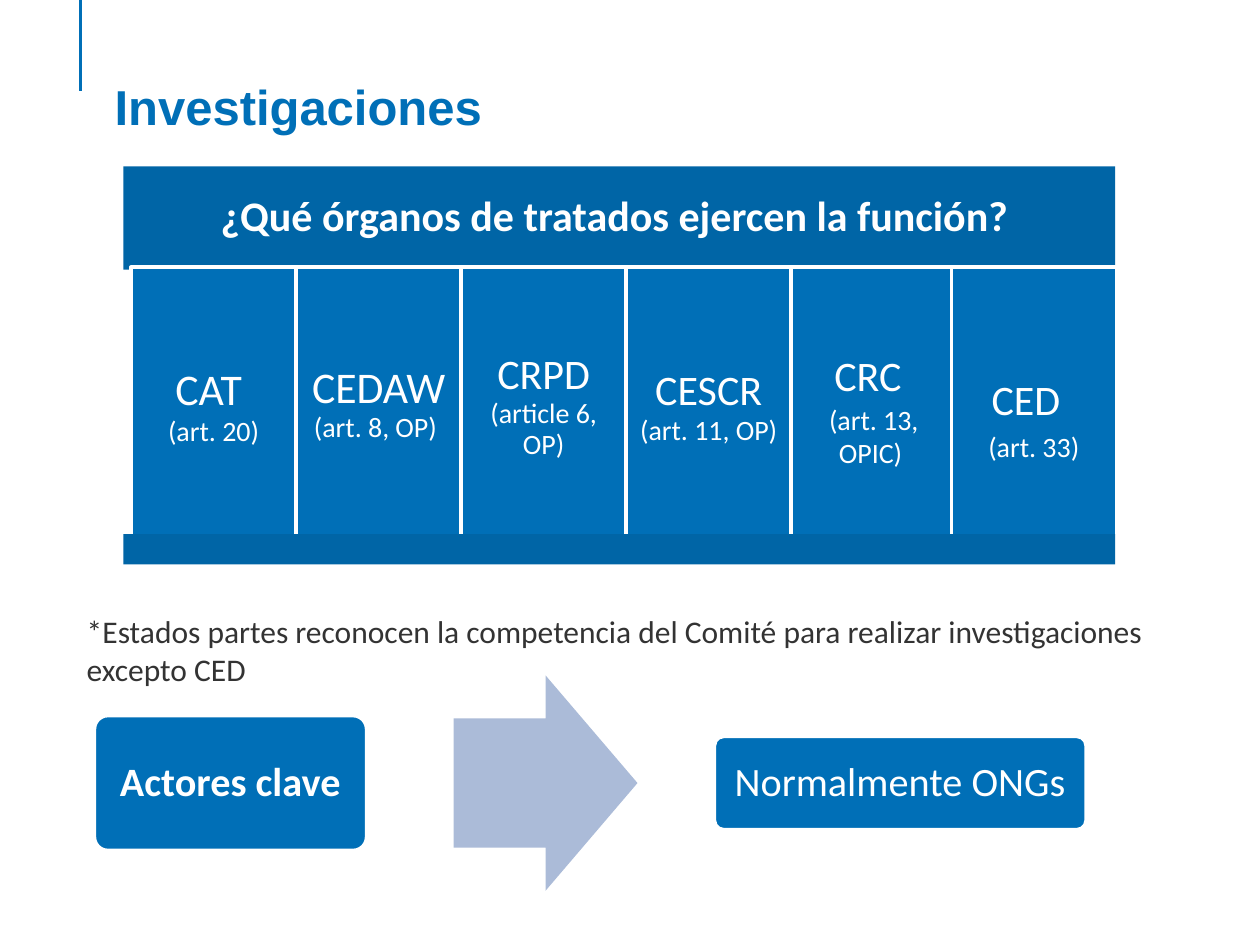
from pptx import Presentation
from pptx.dml.color import RGBColor
from pptx.enum.shapes import MSO_CONNECTOR, MSO_SHAPE
from pptx.enum.text import MSO_ANCHOR, PP_ALIGN
from pptx.oxml.ns import qn
from pptx.util import Inches, Pt
from lxml import etree

RECT, ROUNDED = MSO_SHAPE.RECTANGLE, MSO_SHAPE.ROUNDED_RECTANGLE
ARROW = MSO_SHAPE.RIGHT_ARROW
LEFT, CENTER = PP_ALIGN.LEFT, PP_ALIGN.CENTER
TOP, MIDDLE = MSO_ANCHOR.TOP, MSO_ANCHOR.MIDDLE
TITLE_ONLY = 5

THEME = {
    "blue": "006FB7", "band": "0065A6", "arrow": "ABBBD8",
    "white": "FFFFFF", "dark": "333333",
    "heading_font": "Arial", "body_font": "Calibri",
    "title": 28, "header": 24, "actor": 23, "note": 18, "article": 16,
    "rule": 2, "tight": 0.9,
}

# Content
TITLE = "Investigaciones"
HEADER = "¿Qué órganos de tratados ejercen la función? "
NOTE = ("*Estados partes reconocen la competencia del Comité para realizar "
        "investigaciones excepto CED")
ARTICLE = THEME["article"]
# Each committee: (line spacing, paragraphs of (text, size) runs)
COMMITTEES = [
    (1, [[("CAT ", 25)], [("(art. 20)", ARTICLE)]]),
    (THEME["tight"], [[("CEDAW ", 25), ("(art. 8, OP) ", ARTICLE)]]),
    (THEME["tight"], [[("CRPD", 24), (" ", 27), ("(article 6, OP)", ARTICLE)]]),
    (THEME["tight"], [[("CESCR", 24), (" ", 29), ("(art. 11, OP)", ARTICLE)]]),
    (1, [[("CRC", 24), (" ", 30)], [("(art. 13, OPIC) ", ARTICLE)]]),
    (1, [[("CED", 24), (" ", 40)], [("(art. 33)", ARTICLE)]]),
]
# Actors: text, bold, left, width, height
ACTORS = [("Actores clave", True, 0.75, 2.16, 1.07),
          ("Normalmente ONGs", False, 5.67, 2.95, 0.74)]

# Layout in inches
PANEL_LEFT, PANEL_WIDTH = 0.98, 7.87
COLUMN_LEFT, COLUMN_TOP, COLUMN_WIDTH, COLUMN_HEIGHT = 1.04, 2.12, 1.31, 2.18
FLOW_MIDDLE = 6.215


def color(name):
    return RGBColor.from_string(THEME[name])


def write(shape, paragraphs, ink="white", font="body_font", bold=False,
          align=CENTER, anchor=MIDDLE, spacing=1, inset=0.1):
    """Fill a shape with paragraphs, each a list of (text, size) runs."""
    frame = shape.text_frame
    frame.word_wrap = True
    frame.vertical_anchor = anchor
    frame.margin_left = frame.margin_right = Inches(0.1)
    frame.margin_top = frame.margin_bottom = Inches(inset)
    for index, runs in enumerate(paragraphs):
        para = frame.paragraphs[0] if index == 0 else frame.add_paragraph()
        para.alignment = align
        para.line_spacing = spacing
        para.space_before = Pt(0)
        for text, size in runs:
            span = para.add_run()
            span.text = text
            span.font.name = THEME[font]
            span.font.size = Pt(size)
            span.font.bold = bold
            span.font.color.rgb = color(ink)


def add_block(page, kind, left, top, width, height, fill, outlined=False):
    block = page.shapes.add_shape(kind, Inches(left), Inches(top),
                                  Inches(width), Inches(height))
    block.shadow.inherit = False
    block.fill.solid()
    block.fill.fore_color.rgb = color(fill)
    if outlined:
        block.line.color.rgb = color("white")
        block.line.width = Pt(THEME["rule"])
    else:
        block.line.fill.background()
    return block


def add_heading(page):
    rule = page.shapes.add_connector(MSO_CONNECTOR.STRAIGHT, Inches(0.64), 0,
                                     Inches(0.64), Inches(0.72))
    rule.line.color.rgb = color("blue")
    rule.line.width = Pt(THEME["rule"])
    properties = rule._element.find(qn("p:spPr"))
    etree.SubElement(properties, qn("a:effectLst"))

    title = page.shapes.title
    title.left, title.top = Inches(0.81), Inches(0.52)
    title.width, title.height = Inches(8.27), Inches(0.8)
    write(title, [[(TITLE, THEME["title"])]], ink="blue", font="heading_font",
          bold=True, align=LEFT, anchor=TOP, inset=0.09)


def add_committees(page):
    header = add_block(page, RECT, PANEL_LEFT, 1.32, PANEL_WIDTH, 0.82, "band")
    write(header, [[(HEADER, THEME["header"])]], bold=True,
          spacing=THEME["tight"])
    # The last column is pulled back to end with the panel
    last_left = PANEL_LEFT + PANEL_WIDTH - COLUMN_WIDTH + 0.01
    for index, (spacing, paragraphs) in enumerate(COMMITTEES):
        left = min(COLUMN_LEFT + index * COLUMN_WIDTH, last_left)
        column = add_block(page, RECT, left, COLUMN_TOP, COLUMN_WIDTH,
                           COLUMN_HEIGHT, "blue", outlined=True)
        write(column, paragraphs, spacing=spacing)
    add_block(page, RECT, PANEL_LEFT, 4.24, PANEL_WIDTH, 0.24, "band")


def add_actors(page):
    for text, bold, left, width, height in ACTORS:
        actor = add_block(page, ROUNDED, left, FLOW_MIDDLE - height / 2, width,
                          height, "blue", outlined=True)
        actor.adjustments[0] = 0.1
        write(actor, [[(text, THEME["actor"])]], bold=bold,
              spacing=THEME["tight"])
    arrow = add_block(page, ARROW, 3.6, FLOW_MIDDLE - 1.71 / 2, 1.46, 1.71,
                      "arrow")
    arrow.adjustments[0], arrow.adjustments[1] = 0.6, 0.5


def main():
    deck = Presentation()
    deck.slide_width, deck.slide_height = Inches(10), Inches(7.5)
    page = deck.slides.add_slide(deck.slide_layouts[TITLE_ONLY])
    add_heading(page)
    add_actors(page)
    add_committees(page)
    # Footnote to the committees
    note = page.shapes.add_textbox(Inches(0.59), Inches(4.81), Inches(8.74),
                                   Inches(0.71))
    write(note, [[(NOTE, THEME["note"])]], ink="dark", align=LEFT, anchor=TOP,
          inset=0.05)
    deck.save("out.pptx")


if __name__ == "__main__":
    main()
